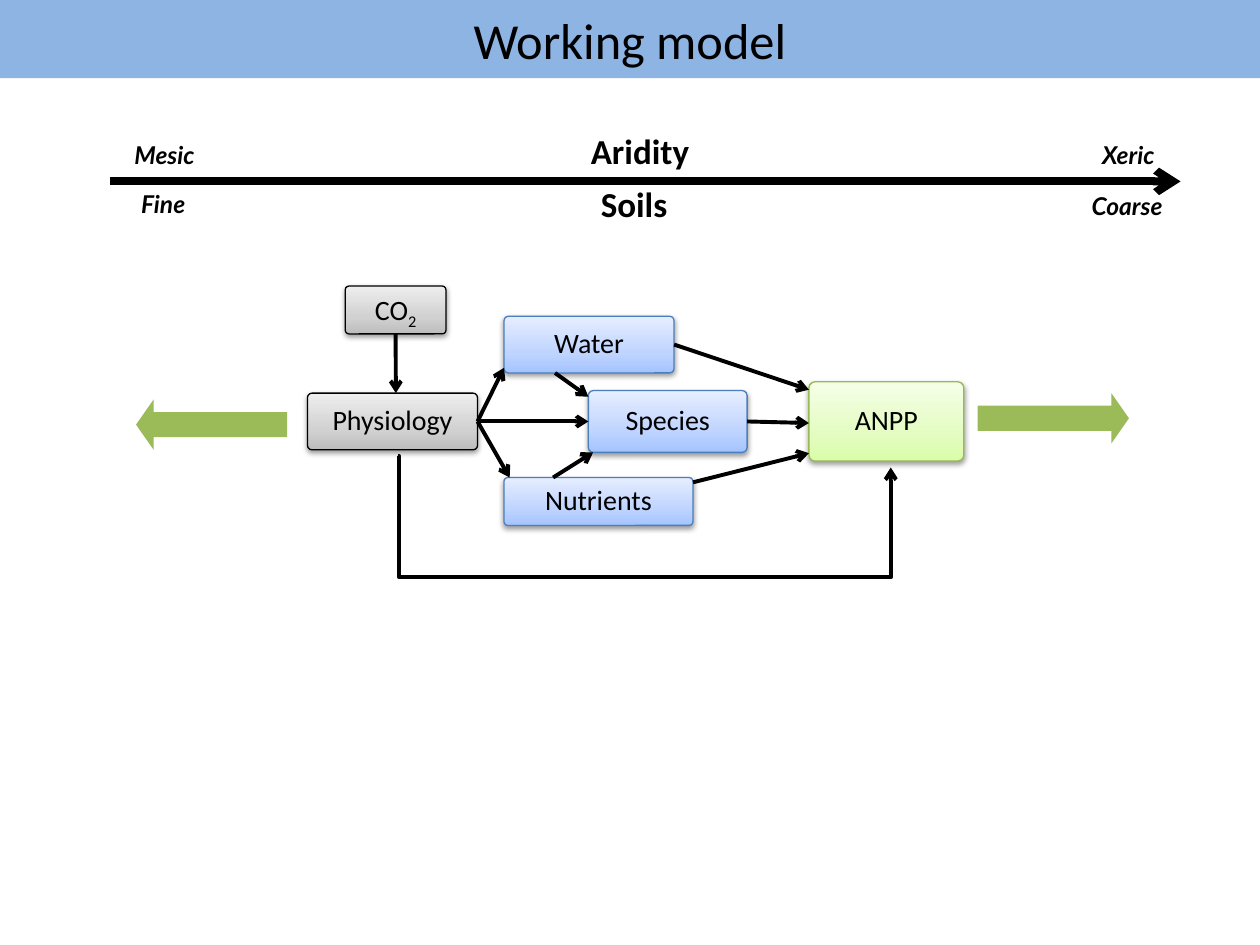
from copy import deepcopy

from lxml import etree
from pptx import Presentation
from pptx import util as u
from pptx.dml.color import RGBColor
from pptx.enum import shapes, text
from pptx.oxml import ns

COLORS = {"ink": "000000", "banner": "8EB4E3", "trend": "9BBB59", "water_edge": "4B7EBC", "anpp_edge": "98B955"}
GRADIENTS = {
    "driver": ("BDBDBD", "D1D1D1", "EEEEEE"),
    "pathway": ("A4C4FF", "BFD4FF", "E6EEFF"),
    "outcome": ("DAFDA7", "E4FCC2", "F5FFE7"),
}
COLUMNS, ROWS = 100, 75


def color(name):
    return RGBColor.from_string(COLORS[name])


def add_xml(parent, tag, **attributes):
    return etree.SubElement(parent, ns.qn(tag), attributes)


class Diagram:
    """Style and current slide; lengths are grid columns and rows."""

    def __init__(self, deck):
        self.slide = deck.slides.add_slide(deck.slide_layouts[5])
        self.column = deck.slide_width / COLUMNS
        self.row = deck.slide_height / ROWS

    def place(self, x, y, width, height):
        return [round(n * unit) for n, unit in zip((x, y, width, height), (self.column, self.row) * 2)]

    def set_words(self, frame, words, size, font="Calibri", bold=False, italic=False, align=text.PP_ALIGN.CENTER):
        frame.text = words
        line = frame.paragraphs[0]
        line.alignment = align
        self.style(line.runs[0], size, font, bold, italic)
        return line

    def style(self, run, size, font="Calibri", bold=False, italic=False):
        run.font.size, run.font.name = u.Pt(size), font
        run.font.bold, run.font.italic = bold, italic
        run.font.color.rgb = color("ink")

    def tighten(self, frame):
        frame.margin_left = frame.margin_right = u.Inches(0.02)
        frame.margin_top = frame.margin_bottom = u.Inches(0.02)
        frame.vertical_anchor = text.MSO_ANCHOR.MIDDLE
        frame.word_wrap = True

    def title(self, words, height):
        banner = self.slide.shapes.title
        banner.left, banner.top, banner.width, banner.height = self.place(0, 0, COLUMNS, height)
        banner.fill.solid()
        banner.fill.fore_color.rgb = color("banner")
        banner.text_frame.auto_size = text.MSO_AUTO_SIZE.NONE
        banner.text_frame.vertical_anchor = text.MSO_ANCHOR.MIDDLE
        self.set_words(banner.text_frame, words, 28.8)

    def label(self, words, x, y, width, height):
        frame = self.slide.shapes.add_textbox(*self.place(x, y, width, height)).text_frame
        self.tighten(frame)
        self.set_words(frame, words, 14, "Lato", True, True).line_spacing = 0.9

    def heading(self, words, x, y, width):
        frame = self.slide.shapes.add_textbox(*self.place(x, y, width, 4.4)).text_frame
        frame.word_wrap = False
        self.set_words(frame, words, 20, bold=True, align=text.PP_ALIGN.LEFT)

    def box(self, words, bounds, gradient, edge, subscript=""):
        box = self.slide.shapes.add_shape(shapes.MSO_SHAPE.ROUNDED_RECTANGLE, *self.place(*bounds))
        box.adjustments[0] = 0.08
        box.line.color.rgb = color(edge)
        box.line.width = u.Pt(0.75)

        box.fill.gradient()
        box.fill.gradient_angle = 90
        stops = box._element.spPr.find(".//" + ns.qn("a:gsLst"))
        stops.insert(1, deepcopy(stops[0]))
        for stop, share, shade in zip(box.fill.gradient_stops, (0, 0.35, 1), GRADIENTS[gradient]):
            stop.position = share
            stop.color.rgb = RGBColor.from_string(shade)

        box.shadow.inherit = False
        effects = box._element.spPr.find(ns.qn("a:effectLst"))
        shadow = add_xml(effects, "a:outerShdw", blurRad="40000", dist="20000", dir="5400000", rotWithShape="0")
        add_xml(add_xml(shadow, "a:srgbClr", val=COLORS["ink"]), "a:alpha", val="38000")

        self.tighten(box.text_frame)
        line = self.set_words(box.text_frame, words, 16)
        line.line_spacing = 0.9
        if subscript:
            run = line.add_run()
            run.text = subscript
            self.style(run, 16)
            run.font._element.set("baseline", "-25000")

    def arrow(self, start, end, weight=2.25, kind=shapes.MSO_CONNECTOR.STRAIGHT):
        arrow = self.slide.shapes.add_connector(kind, *self.place(*start, *end))
        arrow.line.color.rgb = color("ink")
        arrow.line.width = u.Pt(weight)
        add_xml(arrow.line._get_or_add_ln(), "a:tailEnd", type="arrow")
        add_xml(arrow._element.spPr, "a:effectLst")
        return arrow

    def detour(self, start, end, floor):
        """Arrow that drops to the floor row, runs across and rises."""
        arrow = self.arrow(start, end, kind=shapes.MSO_CONNECTOR.ELBOW)
        geometry = arrow._element.spPr.find(ns.qn("a:prstGeom"))
        geometry.set("prst", "bentConnector5")
        guides = geometry.find(ns.qn("a:avLst"))
        drop = (floor - start[1]) / (end[1] - start[1])
        for number, share in enumerate((0.002, drop, 1), 1):
            add_xml(guides, "a:gd", name=f"adj{number}", fmla=f"val {round(share * 100000)}")

    def trend(self, x, y, turn):
        trend = self.slide.shapes.add_shape(shapes.MSO_SHAPE.UP_ARROW, *self.place(x, y, 4, 12))
        trend.adjustments[0], trend.adjustments[1] = 0.5, 0.35
        trend.rotation = turn
        trend.fill.solid()
        trend.fill.fore_color.rgb = color("trend")
        trend.line.fill.background()
        trend.shadow.inherit = False


BOXES = {
    "CO": ((27.4, 22.7, 8, 3.8), "driver", "ink", "2"),
    "Physiology": ((24.4, 31.2, 13.5, 4.5), "driver", "ink"),
    "Water": ((40, 25.1, 13.5, 4.5), "pathway", "water_edge"),
    "Species": ((46.7, 31, 12.6, 4.9), "pathway", "water_edge"),
    "Nutrients": ((40, 37.9, 15, 3.8), "pathway", "water_edge"),
    "ANPP": ((64.2, 30.3, 12.3, 6.3), "outcome", "anpp_edge"),
}
# Each end is a box and the shares of its width and height
LINKS = [
    (("CO", 0.5, 1), ("Physiology", 0.52, 0)),
    (("Physiology", 1, 0.5), ("Water", 0, 0.91)),
    (("Physiology", 1, 0.5), ("Species", 0, 0.5)),
    (("Physiology", 1, 0.5), ("Nutrients", 0.03, 0)),
    (("Water", 0.3, 1), ("Species", 0, 0.1)),
    (("Nutrients", 0.26, 0), ("Species", 0.03, 1)),
    (("Water", 1, 0.5), ("ANPP", 0, 0.1)),
    (("Species", 1, 0.5), ("ANPP", 0, 0.52)),
    (("Nutrients", 1, 0.1), ("ANPP", 0, 0.9)),
]


def anchor(name, across, down):
    x, y, width, height = BOXES[name][0]
    return x + across * width, y + down * height


def main():
    deck = Presentation()
    deck.slide_width, deck.slide_height = u.Inches(10), u.Inches(7.5)
    model = Diagram(deck)
    model.title("Working model", 6.2)

    # Gradient of aridity and soils
    model.arrow((8.7, 14.4), (93.7, 14.4), 4.5)
    model.heading("Aridity", 45.9, 9.8, 9.9)
    model.heading("Soils", 46.7, 14, 7.3)
    model.label("Mesic", 6.8, 11.2, 12.5, 2.5)
    model.label("Xeric", 83.3, 11.4, 12.5, 2.1)
    model.label("Fine", 6.7, 15.1, 12.5, 2.5)
    model.label("Coarse", 83.2, 15.4, 12.5, 2.1)

    # Model boxes and their links
    for words, settings in BOXES.items():
        model.box(words, *settings)
    for start, end in LINKS:
        model.arrow(anchor(*start), anchor(*end))
    model.detour((31.6, 36.2), (70.7, 37.1), 45.8)

    # Outward trends
    model.trend(14.8, 27.7, 270)
    model.trend(81.6, 27.2, 90)

    deck.save("out.pptx")


if __name__ == "__main__":
    main()
